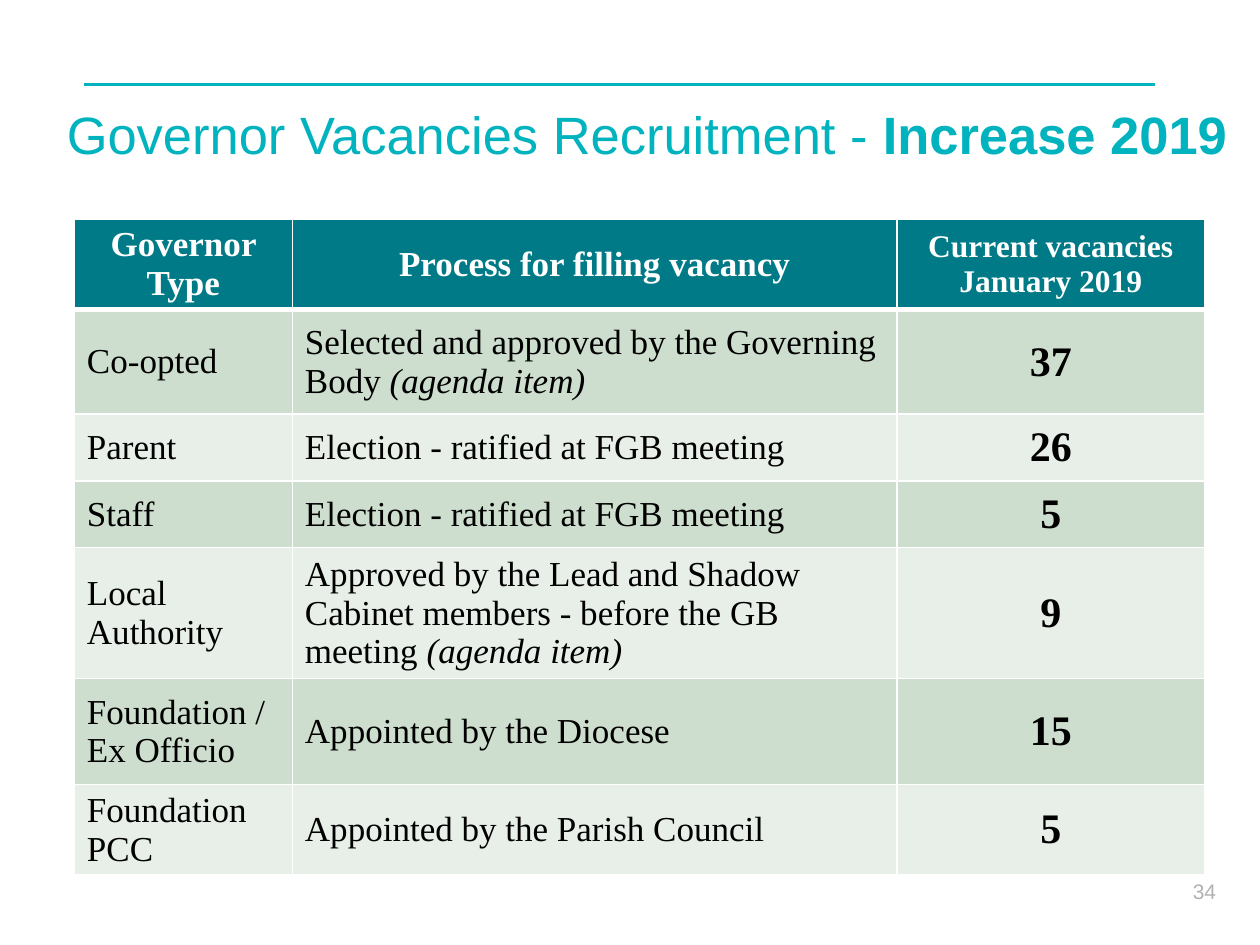
from lxml.etree import SubElement
from pptx import Presentation
from pptx.dml.color import RGBColor
from pptx.enum.shapes import MSO_CONNECTOR
from pptx.enum.text import MSO_ANCHOR, MSO_AUTO_SIZE, PP_ALIGN
from pptx.oxml.ns import qn
from pptx.util import Inches, Pt

# Colours and fonts
TURQUOISE = RGBColor(0x00, 0xB3, 0xBE)
TEAL = RGBColor(0x00, 0x7A, 0x87)
GREEN = RGBColor(0xCE, 0xDE, 0xCE)
PALE_GREEN = RGBColor(0xE8, 0xEF, 0xE8)
WHITE = RGBColor(0xFF, 0xFF, 0xFF)
BLACK = RGBColor(0x00, 0x00, 0x00)
GREY = RGBColor(0xB2, 0xB2, 0xB2)
SANS, SERIF = "Arial", "Times New Roman"

# Content
TITLE = ("Governor Vacancies Recruitment - ", "Increase 2019")
PAGE_NUMBER = "34"
HEADERS = ("Governor Type", "Process for filling vacancy", "Current vacancies January 2019")
AGENDA = "(agenda item)"
# governor type, process, italic note, vacancies, row height
VACANCIES = [
    ("Co-opted", "Selected and approved by the Governing Body ", AGENDA, 37, 0.83),
    ("Parent", "Election - ratified at FGB meeting", "", 26, 0.53),
    ("Staff", "Election - ratified at FGB meeting", "", 5, 0.53),
    ("Local Authority", "Approved by the Lead and Shadow Cabinet members - before the GB meeting ",
     AGENDA, 9, 1.04),
    ("Foundation / Ex Officio", "Appointed by the Diocese", "", 15, 0.84),
    ("Foundation PCC", "Appointed by the Parish Council", "", 5, 0.71),
]
COLUMN_WIDTHS = (1.73, 4.8, 2.44)
HEADER_HEIGHT = 0.71

# Text formats
TITLE_FORMAT = dict(name=SANS, size=Pt(30), bold=False, color=TURQUOISE)
NUMBER_FORMAT = dict(name=SANS, size=Pt(12), color=GREY)
HEADER_FORMAT = dict(name=SERIF, size=Pt(20), bold=True, color=WHITE)
BODY_FORMAT = dict(name=SERIF, size=Pt(20), bold=False, color=BLACK)
COUNT_FORMAT = dict(BODY_FORMAT, size=Pt(24), bold=True)


def add_run(paragraph, text, text_format):
    run = paragraph.add_run()
    run.text = text
    for key, value in text_format.items():
        if key == "color":
            run.font.color.rgb = value
        else:
            setattr(run.font, key, value)


def add_borders(cell, bottom_width):
    properties = cell._tc.get_or_add_tcPr()
    for side, width in (("L", 1), ("R", 1), ("T", 1), ("B", bottom_width)):
        line = SubElement(properties, qn(f"a:ln{side}"), w=str(Pt(width)))
        fill = SubElement(line, qn("a:solidFill"))
        SubElement(fill, qn("a:srgbClr"), val=str(WHITE))


def fill_cell(cell, runs, fill, alignment, bottom_width=1):
    add_borders(cell, bottom_width)
    cell.fill.solid()
    cell.fill.fore_color.rgb = fill
    cell.vertical_anchor = MSO_ANCHOR.MIDDLE
    paragraph = cell.text_frame.paragraphs[0]
    paragraph.alignment = alignment
    for text, text_format in runs:
        add_run(paragraph, text, text_format)


presentation = Presentation()
presentation.slide_width, presentation.slide_height = Inches(10), Inches(7.5)
slide = presentation.slides.add_slide(presentation.slide_layouts[5])

# Rule above the title
rule = slide.shapes.add_connector(
    MSO_CONNECTOR.STRAIGHT, Inches(0.67), Inches(0.67), Inches(9.17), Inches(0.67))
rule.line.color.rgb = TURQUOISE
rule.line.width = Pt(1.5)
SubElement(rule._element.spPr, qn("a:effectLst"))

# Title
title = slide.shapes.title
title.left, title.top, title.width, title.height = map(Inches, (0.43, 0.76, 9.57, 0.99))
title.text_frame.auto_size = MSO_AUTO_SIZE.NONE
title.text_frame.vertical_anchor = MSO_ANCHOR.TOP
heading = title.text_frame.paragraphs[0]
heading.alignment = PP_ALIGN.LEFT
add_run(heading, TITLE[0], TITLE_FORMAT)
add_run(heading, TITLE[1], dict(TITLE_FORMAT, bold=True))

# Vacancies table
heights = [HEADER_HEIGHT] + [row[-1] for row in VACANCIES]
table = slide.shapes.add_table(
    len(heights), len(COLUMN_WIDTHS), Inches(0.59), Inches(1.74),
    Inches(sum(COLUMN_WIDTHS)), Inches(sum(heights))).table
for column, width in zip(table.columns, COLUMN_WIDTHS):
    column.width = Inches(width)
for row, height in zip(table.rows, heights):
    row.height = Inches(height)

for index, header in enumerate(HEADERS):
    size = Pt(18) if index == 2 else Pt(20)
    fill_cell(table.cell(0, index), [(header, dict(HEADER_FORMAT, size=size))],
              TEAL, PP_ALIGN.CENTER, bottom_width=3)

for index, (governor, process, note, count, _) in enumerate(VACANCIES, start=1):
    fill = GREEN if index % 2 else PALE_GREEN
    process_runs = [(process, BODY_FORMAT)]
    if note:
        process_runs.append((note, dict(BODY_FORMAT, italic=True)))
    fill_cell(table.cell(index, 0), [(governor, BODY_FORMAT)], fill, PP_ALIGN.LEFT)
    fill_cell(table.cell(index, 1), process_runs, fill, PP_ALIGN.LEFT)
    fill_cell(table.cell(index, 2), [(str(count), COUNT_FORMAT)], fill, PP_ALIGN.CENTER)

# Page number
number_box = slide.shapes.add_textbox(Inches(7.83), Inches(6.92), Inches(1.92), Inches(0.3))
number_box.text_frame.word_wrap = True
number = number_box.text_frame.paragraphs[0]
number.alignment = PP_ALIGN.RIGHT
add_run(number, PAGE_NUMBER, NUMBER_FORMAT)

presentation.save("out.pptx")
